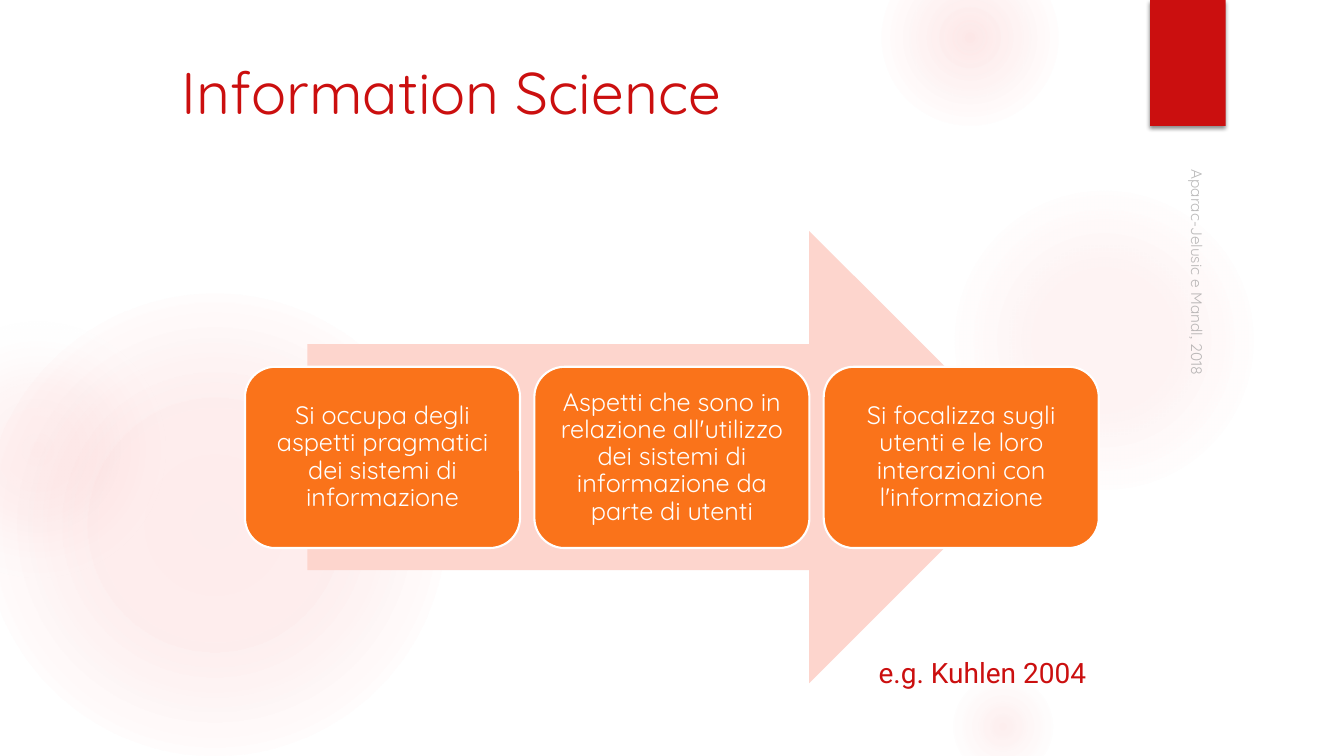
from lxml import etree
from pptx import Presentation
from pptx.dml.color import RGBColor
from pptx.enum.shapes import MSO_SHAPE as Shape
from pptx.enum.text import MSO_ANCHOR as Anchor, MSO_AUTO_SIZE as AutoSize, PP_ALIGN as Align
from pptx.oxml import parse_xml
from pptx.oxml.ns import nsdecls, qn
from pptx.util import Pt

RED, ORANGE, PINK, WHITE, GREY = "CB0F0F", "FA731A", "FDD5CD", "FFFFFF", "8C8C8C"
GLOW, PALE = "F35C5C", "F3F3F3"
HEADING, BODY = "Quicksand", "Roboto"

GLOWS = [
    (-12, 210, 330, [(0, GLOW, 11), (36, GLOW, 10), (75, GLOW, 0)]),
    (-66, 228, 186, [(0, GLOW, 8), (36, GLOW, 5), (71, PALE, 0)]),
    (677.5, 132, 222, [(0, GLOW, 7), (36, GLOW, 6), (69, GLOW, 0)]),
    (630, -36, 126, [(0, GLOW, 14), (36, GLOW, 7), (73, GLOW, 0)]),
    (677.5, 480, 78, [(0, GLOW, 10), (31, GLOW, 5), (66, GLOW, 0)]),
]
STEPS = [
    "Si occupa degli aspetti pragmatici dei sistemi di informazione",
    "Aspetti che sono in relazione all'utilizzo dei sistemi di informazione da parte di utenti",
    "Si focalizza sugli utenti e le loro interazioni con l'informazione",
]
STEP_LEFT, STEP_PITCH = 175, 206.7


def rgb(value):
    return RGBColor.from_string(value)


class SlideBuilder:
    """Draws styled elements on the current slide, with lengths in points."""

    def __init__(self, slide):
        self.slide = slide

    def add_text(self, frame, text, size, color, font=HEADING):
        paragraph = frame.paragraphs[0]
        run = paragraph.add_run()
        run.text = text
        run.font.size = Pt(size)
        run.font.name = font
        run.font.color.rgb = rgb(color)
        return paragraph

    def title(self, text, left, top, width, height, indent):
        shape = self.slide.shapes.title
        shape.left, shape.top, shape.width, shape.height = map(Pt, (left, top, width, height))
        frame = shape.text_frame
        frame.margin_left = Pt(indent)
        frame.vertical_anchor = Anchor.TOP
        frame.auto_size = AutoSize.NONE
        paragraph = self.add_text(frame, text, 42, RED)
        paragraph.alignment = Align.LEFT

    def shape(self, kind, left, top, width, height, fill, line=None):
        shape = self.slide.shapes.add_shape(kind, *map(Pt, (left, top, width, height)))
        shape.shadow.inherit = False
        shape.fill.solid()
        shape.fill.fore_color.rgb = rgb(fill)
        if line:
            shape.line.color.rgb = rgb(line)
            shape.line.width = Pt(1.5)
        else:
            shape.line.fill.background()
        return shape

    def glow(self, left, top, size, stops):
        shape = self.shape(Shape.OVAL, left, top, size, size, GLOW)
        stop_list = "".join(
            f'<a:gs pos="{position * 1000}"><a:srgbClr val="{color}">'
            f'<a:alpha val="{alpha * 1000}"/></a:srgbClr></a:gs>'
            for position, color, alpha in stops
        )
        gradient = parse_xml(
            f'<a:gradFill {nsdecls("a")} rotWithShape="1"><a:gsLst>{stop_list}</a:gsLst>'
            '<a:path path="circle"><a:fillToRect l="50000" t="50000" r="50000" b="50000"/>'
            "</a:path></a:gradFill>"
        )
        properties = shape.element.spPr
        properties.replace(properties.find(qn("a:solidFill")), gradient)

    def ribbon(self, left, top, width, height):
        shape = self.shape(Shape.RECTANGLE, left, top, width, height, RED)
        effects = shape.element.spPr.find(qn("a:effectLst"))
        effects.append(parse_xml(
            f'<a:outerShdw {nsdecls("a")} blurRad="{Pt(3)}" dist="{Pt(2)}" dir="5400000" '
            'rotWithShape="0"><a:srgbClr val="000000"><a:alpha val="45000"/></a:srgbClr>'
            "</a:outerShdw>"
        ))

    def step(self, text, left, top, width, height):
        shape = self.shape(Shape.ROUNDED_RECTANGLE, left, top, width, height, ORANGE, WHITE)
        frame = shape.text_frame
        frame.word_wrap = True
        frame.vertical_anchor = Anchor.MIDDLE
        frame.margin_left = frame.margin_right = frame.margin_top = frame.margin_bottom = Pt(5)
        paragraph = self.add_text(frame, text, 18, WHITE)
        paragraph.alignment = Align.CENTER
        paragraph.line_spacing = 0.9

    def text_box(self, text, left, top, width, height, size, color, font=HEADING):
        box = self.slide.shapes.add_textbox(*map(Pt, (left, top, width, height)))
        self.add_text(box.text_frame, text, size, color, font)
        return box

    def side_note(self, text, left, top, width, height):
        box = self.text_box(text, left, top, width, height, 11, GREY)
        box.rotation = 90
        box.text_frame.word_wrap = True
        box.text_frame.vertical_anchor = Anchor.BOTTOM
        color = box.element.find(".//" + qn("a:srgbClr"))
        etree.SubElement(color, qn("a:alpha")).set("val", "60000")


def main():
    presentation = Presentation()
    presentation.slide_width, presentation.slide_height = Pt(960), Pt(540)
    slide = presentation.slides.add_slide(presentation.slide_layouts[5])
    builder = SlideBuilder(slide)
    for glow in GLOWS:
        builder.glow(*glow)
    builder.ribbon(821.5, 0, 54, 90)
    builder.title("Information Science", 51, 36, 741, 110, indent=79)
    builder.shape(Shape.RIGHT_ARROW, 219.6, 165, 520, 323, PINK)
    for index, text in enumerate(STEPS):
        builder.step(text, STEP_LEFT + index * STEP_PITCH, 262, 196.5, 129.5)
    builder.text_box("e.g. Kuhlen 2004", 620.5, 465, 165.5, 31.5, 20, RED, BODY)
    builder.side_note("Aparac-Jelusic e Mandl, 2018", 705, 254, 304, 24)
    presentation.save("out.pptx")


if __name__ == "__main__":
    main()
